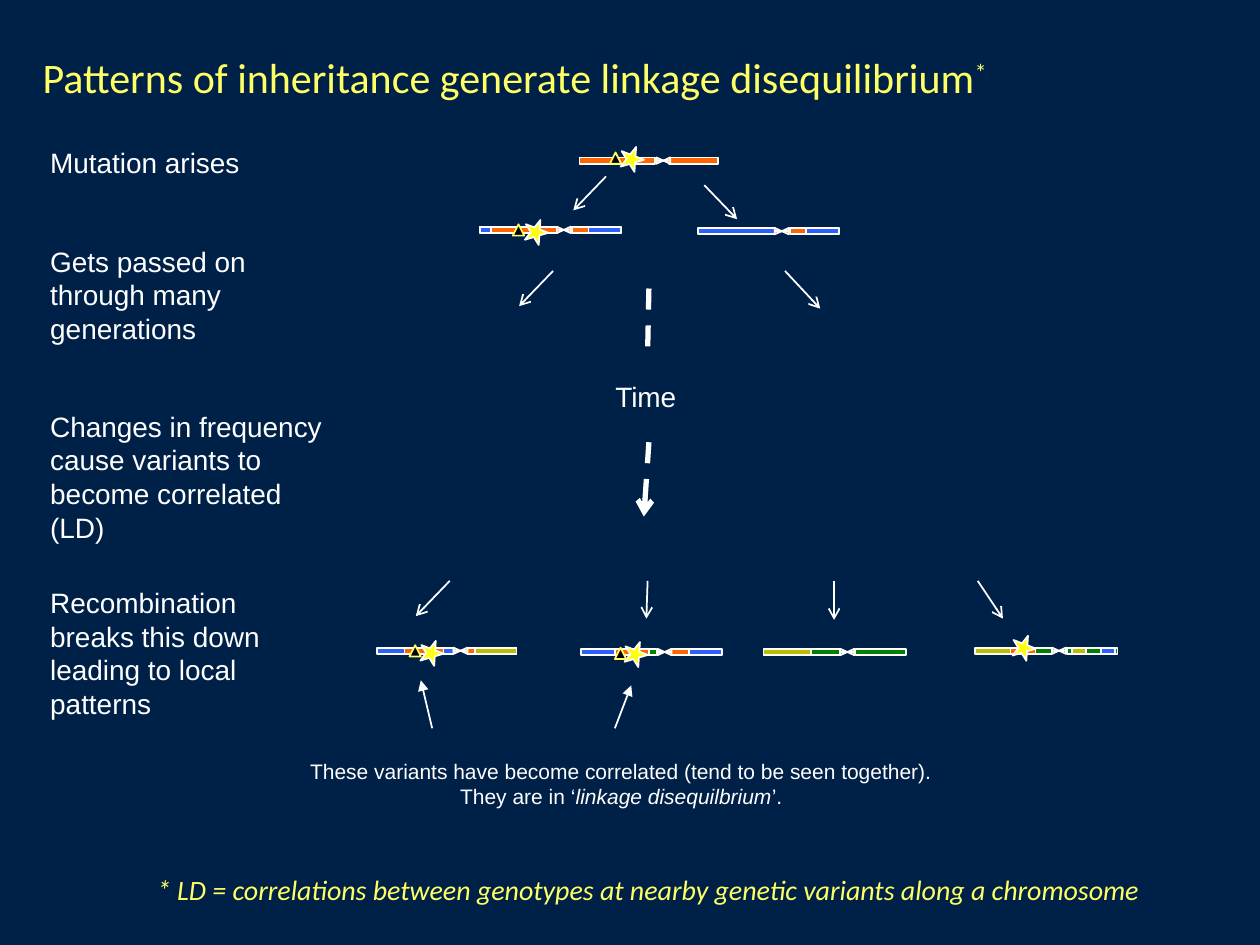
import pptx
import pptx.util
import pptx.dml.color
import pptx.enum.dml
import pptx.enum.shapes
import pptx.enum.text
import lxml.etree

Inches = pptx.util.Inches
Pt = pptx.util.Pt
KIND = pptx.enum.shapes.MSO_SHAPE
ALIGN = pptx.enum.text.PP_ALIGN
ANCHOR = pptx.enum.text.MSO_ANCHOR

NAVY, WHITE, BLACK = "002147", "FFFFFF", "000000"
RED, BLUE, GREEN, GOLD = "FF6600", "2C60FF", "008000", "BBBE00"
STAR, RIM, LEMON = "FFFF0D", "FFFF65", "FFFF66"
THICK, ARM, HUB = 0.05, 0.61, 0.055


def color(code):
    """Turn a hex string into a colour."""
    return pptx.dml.color.RGBColor.from_string(code)


def text(slide, box, lines, size=16, font="Arial", ink=WHITE, align=ALIGN.LEFT,
         anchor=ANCHOR.TOP, wrap=True):
    """Place lines, each a list of (words, style) runs, in a text box."""
    frame = slide.shapes.add_textbox(*map(Inches, box)).text_frame
    frame.word_wrap = wrap
    frame.vertical_anchor = anchor
    for num, line in enumerate(lines):
        para = frame.add_paragraph() if num else frame.paragraphs[0]
        para.alignment = align
        for words, style in line:
            run = para.add_run()
            run.text = words
            run.font.size = Pt(size)
            run.font.name = font
            run.font.color.rgb = color(ink)
            if style == "italic":
                run.font.italic = True
            elif style == "super":
                run.font._element.set("baseline", "30000")


def shape(group, kind, box, fill, edge=WHITE, flip="", turn=0):
    """Add one filled and outlined preset shape."""
    item = group.shapes.add_shape(kind, *map(Inches, box))
    item.shadow.inherit = False
    item.fill.solid()
    item.fill.fore_color.rgb = color(fill)
    item.line.color.rgb = color(edge)
    item.line.width = Pt(1)
    item.rotation = turn
    for axis in flip:
        item._element.spPr.get_or_add_xfrm().set("flip" + axis, "1")


def line(slide, start, end, tip="arrow", width=1, dash=False):
    """Draw a white line with an optional head at its end."""
    item = slide.shapes.add_connector(pptx.enum.shapes.MSO_CONNECTOR.STRAIGHT,
                                      *map(Inches, start + end))
    item.line.color.rgb = color(WHITE)
    item.line.width = Pt(width)
    if dash:
        item.line.dash_style = pptx.enum.dml.MSO_LINE.DASH
    space = pptx.oxml.ns.qn
    if tip:
        lxml.etree.SubElement(item.line._get_or_add_ln(), space("a:tailEnd"), type=tip)
    lxml.etree.SubElement(item._element.spPr, space("a:effectLst"))


def strand(slide, left, top, bands, hub=RED, star=None, mark=None):
    """Draw a chromosome of (offset, width, colour) bands, its hub and variants."""
    group = slide.shapes.add_group_shape()
    for off, width, fill in bands:
        shape(group, KIND.RECTANGLE, (left + off, top, width, THICK), fill)
    half = THICK / 2
    for flip in ("", "V", "H", "HV"):
        spot = (left + ARM + HUB * ("H" in flip), top + half * ("V" in flip), HUB, half)
        shape(group, KIND.RIGHT_TRIANGLE, spot, hub, flip=flip)
    if star:
        spot = (left + star[0], top + star[1], 0.19, 0.19)
        shape(slide, KIND.STAR_5_POINT, spot, STAR, turn=21)
    if mark:
        spot = (left + mark[0], top + mark[1], 0.09, 0.09)
        shape(slide, KIND.ISOSCELES_TRIANGLE, spot, BLACK, RIM)


def steps(slide, left, width):
    """Write the story down the left side."""
    for top, height, words in (
            (1.11, 0.37, "Mutation arises"),
            (1.89, 0.91, "Gets passed on through many generations"),
            (3.2, 1.18, "Changes in frequency cause variants to become correlated (LD)"),
            (4.6, 1.18, "Recombination breaks this down leading to local patterns")):
        text(slide, (left, top, width, height), [[(words, "")]])


def origin(slide, left, top):
    """Draw the first chromosome and its two descendants."""
    strand(slide, left + 0.79, top, [(0, 0.6, RED), (0.71, 0.39, RED)],
           star=(0.32, -0.09), mark=(0.24, -0.04))
    ends = [(0.73, 0.39, RED), (0.86, 0.26, BLUE)]
    strand(slide, left, top + 0.55, [(0, ARM, RED), (0, 0.09, BLUE)] + ends,
           star=(0.35, -0.06), mark=(0.26, -0.02))
    strand(slide, left + 1.73, top + 0.56, [(0, ARM, BLUE)] + ends)
    for x, y, run, drop in ((1, 0.15, -0.26, 0.27), (1.78, 0.22, 0.26, 0.27),
                            (0.58, 0.9, -0.27, 0.28), (2.42, 0.9, 0.28, 0.3)):
        line(slide, (left + x, top + y), (left + x + run, top + y + drop))


def time(slide, left, top):
    """Draw the dashed time arrow around its label."""
    line(slide, (left, top), (left - 0.01, top + 0.51), None, 3, True)
    line(slide, (left, top + 1.22), (left - 0.04, top + 1.81), "arrow", 3, True)
    text(slide, (left - 0.37, top + 0.67, 0.69, 0.37), [[("Time", "")]],
         align=ALIGN.CENTER, wrap=False)


def today(slide, left, top):
    """Draw the present-day chromosomes with the arrows around them."""
    strand(slide, left, top, [(0, ARM, BLUE), (0.22, 0.31, RED), (0.72, 0.39, RED),
                              (0.78, 0.33, GOLD)], star=(0.34, -0.06), mark=(0.26, -0.02))
    strand(slide, left + 1.62, top + 0.01,
           [(0.43, 0.17, GREEN), (0.27, 0.27, RED), (0, 0.27, BLUE),
            (0.72, 0.39, RED), (0.86, 0.26, BLUE)], star=(0.34, -0.06), mark=(0.27, -0.01))
    base = [(0, 0.38, GOLD), (0.38, 0.23, GREEN), (0.73, 0.4, GREEN)]
    strand(slide, left + 3.07, top + 0.01, base, GREEN)
    strand(slide, left + 4.75, top, base + [(0.28, 0.2, RED), (0.77, 0.11, GOLD),
                                            (1, 0.11, BLUE)], GREEN, star=(0.29, -0.1))
    for x, run, drop in ((0.58, -0.27, 0.28), (2.15, -0.01, 0.3),
                         (3.63, 0, 0.31), (4.77, 0.2, 0.3)):
        line(slide, (left + x, top - 0.53), (left + x + run, top - 0.53 + drop))
    for x, run, rise in ((0.44, -0.09, 0.38), (1.89, 0.13, 0.34)):
        line(slide, (left + x, top + 0.64), (left + x + run, top + 0.64 - rise), "triangle")


def words(slide):
    """Write the title, the caption and the footnote."""
    text(slide, (0.24, 0.2, 9.53, 0.66),
         [[("Patterns of inheritance generate linkage disequilibrium", ""), ("*", "super")]],
         size=24, font="Calibri", ink=LEMON, anchor=ANCHOR.BOTTOM)
    text(slide, (2.34, 5.97, 5.18, 0.5),
         [[("These variants have become correlated (tend to be seen together).", "")],
          [("They are in ‘", ""), ("linkage disequilbrium", "italic"), ("’.", "")]],
         size=12, align=ALIGN.CENTER, wrap=False)
    text(slide, (0.38, 6.58, 9.53, 0.66),
         [[("* LD = correlations between genotypes at nearby genetic variants "
            "along a chromosome", "italic")]],
         font="Calibri", ink=LEMON, align=ALIGN.CENTER, anchor=ANCHOR.BOTTOM)


def main():
    """Build the slide and save it."""
    deck = pptx.Presentation()
    deck.slide_width, deck.slide_height = Inches(10), Inches(7.5)
    slide = deck.slides.add_slide(deck.slide_layouts[6])
    slide.background.fill.solid()
    slide.background.fill.fore_color.rgb = color(NAVY)
    steps(slide, 0.3, 2.38)
    origin(slide, 3.81, 1.25)
    time(slide, 5.15, 2.29)
    today(slide, 2.99, 5.14)
    words(slide)
    deck.save("out.pptx")


if __name__ == "__main__":
    main()
